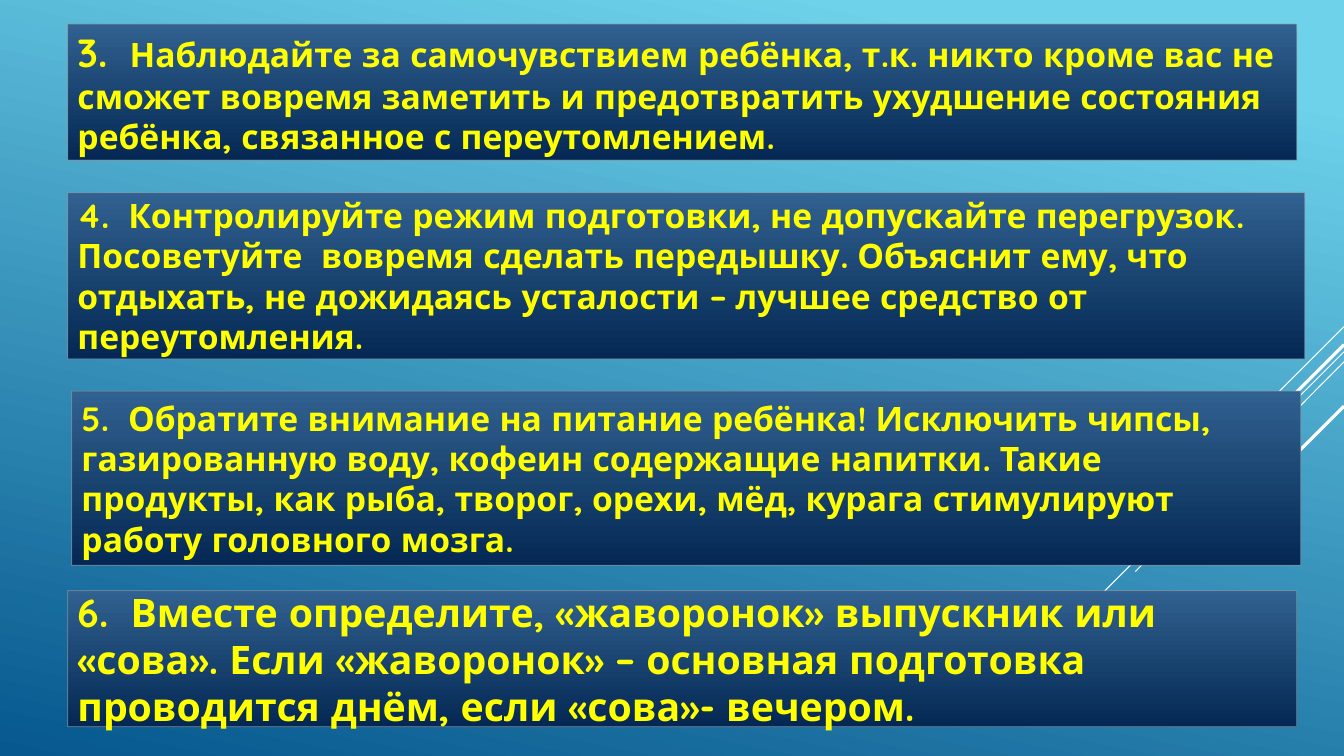
from pptx import Presentation
from pptx.dml.color import RGBColor
from pptx.enum.shapes import MSO_CONNECTOR, MSO_SHAPE
from pptx.enum.text import MSO_ANCHOR, PP_ALIGN
from pptx.oxml.ns import qn
from pptx.util import Inches, Pt
from lxml import etree

STRAIGHT = MSO_CONNECTOR.STRAIGHT
RECTANGLE = MSO_SHAPE.RECTANGLE
MIDDLE = MSO_ANCHOR.MIDDLE
LEFT = PP_ALIGN.LEFT

FONT = "Quicksand"
WIDTH, HEIGHT = 13.33, 7.5

# Diagonal rays: start height on the right edge, end x, end y, weight
RAYS = [
    (3.24, 12.33, 4.24, 0.75),
    (3.49, 10.07, 6.75, 0.75),
    (3.59, 11.26, 5.67, 0.75),
    (3.42, 11.42, 5.33, 2.25),
    (4.03, 11.94, 5.42, 2.25),
]

# Advice panels: left, top, width, height, runs of (text, size)
ADVICE = [
    (0.67, 0.24, 12.19, 1.35, [
        ("3.  ", 28),
        ("Наблюдайте за самочувствием ребёнка, т.к. никто кроме вас не сможет "
         "вовремя заметить и предотвратить ухудшение состояния ребёнка, "
         "связанное с переутомлением.", 24)]),
    (0.67, 1.91, 12.27, 1.65, [
        ("4.  Контролируйте режим подготовки, не допускайте перегрузок. "
         "Посоветуйте  вовремя сделать передышку. Объяснит ему, что отдыхать, "
         "не дожидаясь усталости – лучшее средство от переутомления.", 24)]),
    (0.71, 3.88, 12.19, 1.73, [
        ("5.  Обратите внимание на питание ребёнка! Исключить чипсы, "
         "газированную воду, кофеин содержащие напитки. Такие продукты, как "
         "рыба, творог, орехи, мёд, курага стимулируют работу головного "
         "мозга.", 24)]),
    (0.67, 5.86, 12.19, 1.35, [
        ("6.  Вместе определите, «жаворонок» выпускник или «сова». Если "
         "«жаворонок» – основная подготовка проводится днём, если «сова»- "
         "вечером.", 28)]),
]


def color(hex_value):
    return RGBColor.from_string(hex_value)


def set_gradient(fill, stops, clockwise_angle):
    fill.gradient()
    fill.gradient_angle = 360 - clockwise_angle
    for stop, (position, hex_value) in zip(fill.gradient_stops, stops):
        stop.position = position
        stop.color.rgb = color(hex_value)


def add_ray(slide, start_y, end_x, end_y, weight):
    ray = slide.shapes.add_connector(
        STRAIGHT, Inches(WIDTH), Inches(start_y), Inches(end_x), Inches(end_y))
    ray.line.color.rgb = color("FFFFFF")
    ray.line.width = Pt(weight)
    etree.SubElement(ray._element.spPr, qn("a:effectLst"))


def add_panel(slide, left, top, width, height, runs):
    panel = slide.shapes.add_shape(
        RECTANGLE, Inches(left), Inches(top), Inches(width), Inches(height))
    panel.shadow.inherit = False
    set_gradient(panel.fill, [(0, "316190"), (1, "042853")], 90)

    # Thin border at 60 % opacity
    panel.line.color.rgb = color("89919C")
    panel.line.width = Pt(0.75)
    border_color = panel.line._ln.find(".//" + qn("a:srgbClr"))
    etree.SubElement(border_color, qn("a:alpha"), val="60000")

    # Advice text
    frame = panel.text_frame
    frame.word_wrap = True
    frame.vertical_anchor = MIDDLE
    paragraph = frame.paragraphs[0]
    paragraph.alignment = LEFT
    for text, size in runs:
        run = paragraph.add_run()
        run.text = text
        run.font.name = FONT
        run.font.size = Pt(size)
        run.font.bold = True
        run.font.color.rgb = color("FFFF00")


def main():
    deck = Presentation()
    deck.slide_width = Inches(WIDTH)
    deck.slide_height = Inches(HEIGHT)
    slide = deck.slides.add_slide(deck.slide_layouts[6])

    # Background
    set_gradient(slide.background.fill, [(0.1, "6ED2EB"), (1, "06588E")], 102)

    for ray in RAYS:
        add_ray(slide, *ray)
    for panel in ADVICE:
        add_panel(slide, *panel)

    deck.save("out.pptx")


if __name__ == "__main__":
    main()
